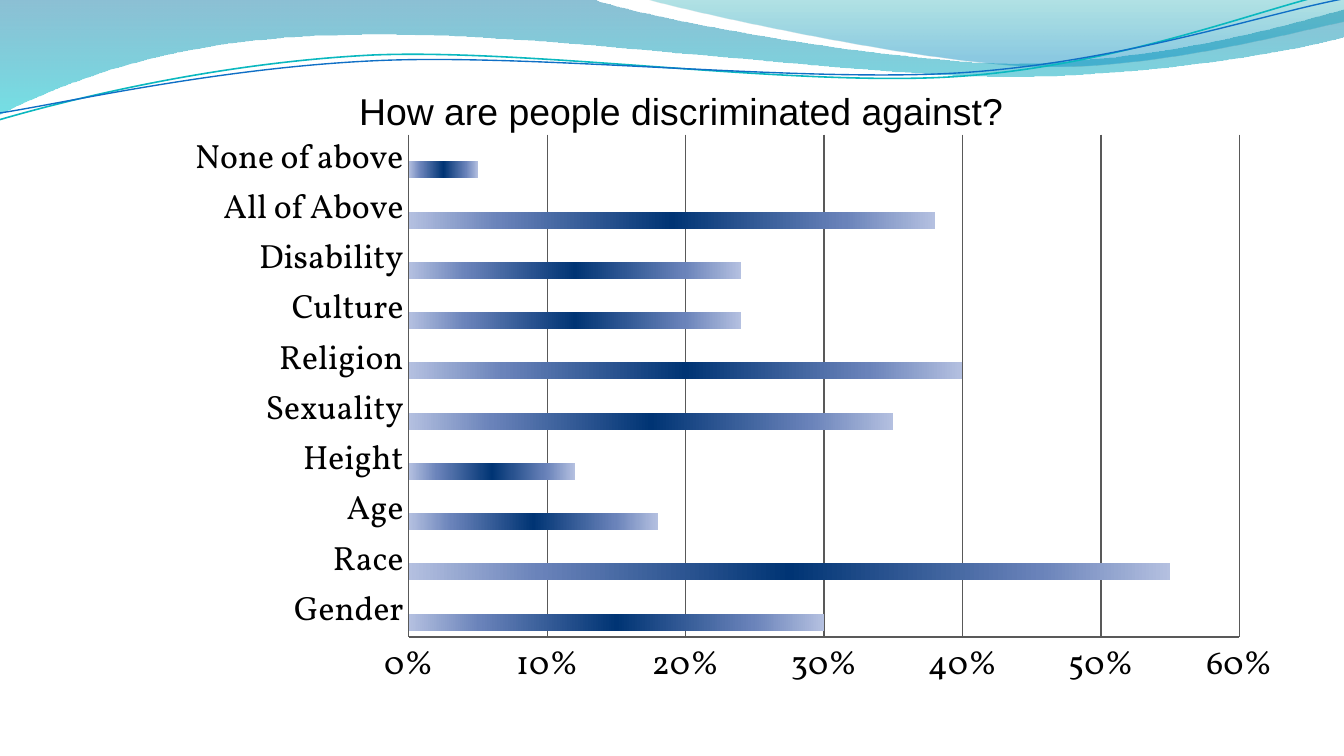
import math
from dataclasses import dataclass

from lxml import etree
from pptx import Presentation
from pptx import util as u
from pptx.chart.data import CategoryChartData
from pptx.dml.color import RGBColor
from pptx.enum import chart as charts
from pptx.oxml.ns import qn


@dataclass(frozen=True)
class Theme:
    text: str = "000000"
    grid: str = "595959"
    teal_line: str = "0AB8BF"
    blue_line: str = "0F6FC6"
    series: tuple = ("0F6FC6", "009DD9", "0BD0D9")
    back_wave: tuple = ((0, "0074A1", 45), (100, "00C6CF", 55))
    front_wave: tuple = ((0, "00A1A9", 30), (80, "008BBF", 45))
    bar: tuple = ((0, "B4C0E0", 100), (17, "6A83BA", 100), (50, "003474", 100),
                  (83, "6A83BA", 100), (100, "B4C0E0", 100))
    title_font: str = "Arial"
    chart_font: str = "Vollkorn"
    title_size: int = 20
    chart_size: int = 18


def turn(point, center, degrees):
    angle = math.radians(degrees)
    x, y = point[0] - center[0], point[1] - center[1]
    return (center[0] + x * math.cos(angle) - y * math.sin(angle),
            center[1] + x * math.sin(angle) + y * math.cos(angle))


class SlideBuilder:
    def __init__(self, slide, theme):
        self.slide = slide
        self.theme = theme

    def color_line(self, line, color, width):
        line.color.rgb = RGBColor.from_string(color)
        line.width = u.Pt(width)

    def gradient(self, fill, owner, stops, angle):
        fill.gradient()
        fill.gradient_angle = angle
        stop_list = owner.xpath(".//a:gradFill/a:gsLst")[0]
        for stop in list(stop_list):
            stop_list.remove(stop)
        for position, color, opacity in stops:
            stop = etree.SubElement(stop_list, qn("a:gs"), pos=str(position * 1000))
            tint = etree.SubElement(stop, qn("a:srgbClr"), val=color)
            etree.SubElement(tint, qn("a:alpha"), val=str(opacity * 1000))

    def outline(self, pieces, close, center=(0, 0), tilt=0):
        points = [turn(piece[i:i + 2], center, tilt)
                  for piece in pieces for i in range(0, len(piece), 2)]
        points = [(u.Pt(x), u.Pt(y)) for x, y in points]
        builder = self.slide.shapes.build_freeform(*points[0])
        builder.add_line_segments(points[1:], close=close)
        shape = builder.convert_to_shape()
        shape.shadow.inherit = False
        shape.rotation = -tilt % 360
        segments = iter(shape.element.xpath(".//a:lnTo"))
        for piece in pieces[1:]:
            segment = next(segments)
            if len(piece) == 6:
                curve = etree.Element(qn("a:cubicBezTo"))
                segment.addprevious(curve)
                for handle in (segment, next(segments), next(segments)):
                    curve.append(handle[0])
                    handle.getparent().remove(handle)
        return shape

    def wave(self, pieces, stops):
        shape = self.outline(pieces, True)
        self.gradient(shape.fill, shape.element, stops, 270)
        shape.line.fill.background()

    def ribbon(self, pieces, center, color, width):
        shape = self.outline(pieces, False, center, 2.7)
        shape.fill.background()
        self.color_line(shape.line, color, width)

    def title(self, words, left, top, width, height):
        box = self.slide.shapes.add_textbox(*map(u.Pt, (left, top, width, height)))
        box.text_frame.word_wrap = True
        paragraph = box.text_frame.paragraphs[0]
        paragraph.text = words
        paragraph.font.name = self.theme.title_font
        paragraph.font.size = u.Pt(self.theme.title_size)
        paragraph.font.color.rgb = RGBColor.from_string(self.theme.text)

    def bar_chart(self, shares, left, top, width, height, plot_box):
        data = CategoryChartData(number_format="0%")
        data.categories = list(shares)
        data.add_series("Series 1", list(shares.values()))
        for name in ("Series 2", "Series 3"):
            data.add_series(name, [None] * len(shares))
        chart = self.slide.shapes.add_chart(
            charts.XL_CHART_TYPE.BAR_CLUSTERED,
            *map(u.Pt, (left, top, width, height)), data).chart
        chart.has_title = False
        chart.has_legend = False
        chart.font.name = self.theme.chart_font
        chart.font.size = u.Pt(self.theme.chart_size)
        chart.font.color.rgb = RGBColor.from_string(self.theme.text)

        plot = chart.plots[0]
        plot.vary_by_categories = False
        plot.gap_width = 75
        plot.overlap = 40
        for series, color in zip(plot.series, self.theme.series):
            series.format.fill.solid()
            series.format.fill.fore_color.rgb = RGBColor.from_string(color)
        self.gradient(plot.series[0].format.fill, chart.element, self.theme.bar, 0)

        for axis in (chart.category_axis, chart.value_axis):
            axis.major_tick_mark = charts.XL_TICK_MARK.NONE
            axis.minor_tick_mark = charts.XL_TICK_MARK.NONE
            self.color_line(axis.format.line, self.theme.grid, 0.75)
        values = chart.value_axis
        values.minimum_scale = 0
        values.maximum_scale = 0.6
        values.major_unit = 0.1
        values.has_major_gridlines = True
        self.color_line(values.major_gridlines.format.line, self.theme.grid, 0.75)
        values.tick_labels.number_format = "0%"
        values.tick_labels.number_format_is_linked = False
        self.place_plot(chart, [length / whole for length, whole
                                in zip(plot_box, (width, height) * 2)])

    def place_plot(self, chart, fractions):
        area = chart.element.xpath("c:chart/c:plotArea")[0]
        for layout in area.findall(qn("c:layout")):
            area.remove(layout)
        layout = etree.Element(qn("c:layout"))
        area.insert(0, layout)
        manual = etree.SubElement(layout, qn("c:manualLayout"))
        settings = [("layoutTarget", "inner"), ("xMode", "edge"), ("yMode", "edge")]
        for tag, value in settings + list(zip("xywh", fractions)):
            etree.SubElement(manual, qn("c:" + tag), val=str(value))


def main():
    theme = Theme()
    presentation = Presentation()
    presentation.slide_width = u.Pt(720)
    presentation.slide_height = u.Pt(405)
    slide = presentation.slides.add_slide(presentation.slide_layouts[6])
    builder = SlideBuilder(slide, theme)

    builder.wave([
        (0, 0),
        (316.8, -0.7),
        (342.7, 9.4, 478.1, 33.8, 545.8, 33.8),
        (614.2, 33.8, 689.8, 13.7, 720, 5),
        (720.7, 19.4),
        (707.8, 23.8, 626.4, 41, 537.1, 41),
        (447.8, 40.3, 275, 15.1, 185, 18.7),
        (92.9, 19.4, 33.1, 44.6, -0.7, 61.2)], theme.back_wave)
    builder.wave([
        (344.9, -0.7),
        (366.5, 5.8, 491, 33.1, 553.7, 35.3),
        (616.3, 37.4, 691.9, 17.3, 720, 11.5),
        (720, 0)], theme.front_wave)
    builder.ribbon([
        (0, 64.1),
        (34.6, 54, 113.8, 33.8, 199.4, 29.5),
        (285.1, 25.9, 426.2, 46.8, 512.6, 41),
        (599.8, 35.3, 676.1, 4.3, 718.6, -5)], (359.3, 31.3), theme.teal_line, 0.85)
    builder.ribbon([
        (0, 60.5),
        (33.8, 55.4, 118.1, 36, 203.8, 32.4),
        (290.2, 28.8, 429.8, 44.6, 516.2, 38.9),
        (601.9, 33.1, 677.5, 7.2, 720, -0.7)], (359.6, 32), theme.blue_line, 0.75)

    shares = {"Gender": 0.3, "Race": 0.55, "Age": 0.18, "Height": 0.12,
              "Sexuality": 0.35, "Religion": 0.4, "Culture": 0.24,
              "Disability": 0.24, "All of Above": 0.38, "None of above": 0.05}
    builder.bar_chart(shares, 41.8, 64.8, 642.2, 331.9, (177.2, 7.3, 445, 269.2))
    builder.title("How are people discriminated against?", 185.3, 43.5, 383.8, 31.7)
    presentation.save("out.pptx")


if __name__ == "__main__":
    main()
